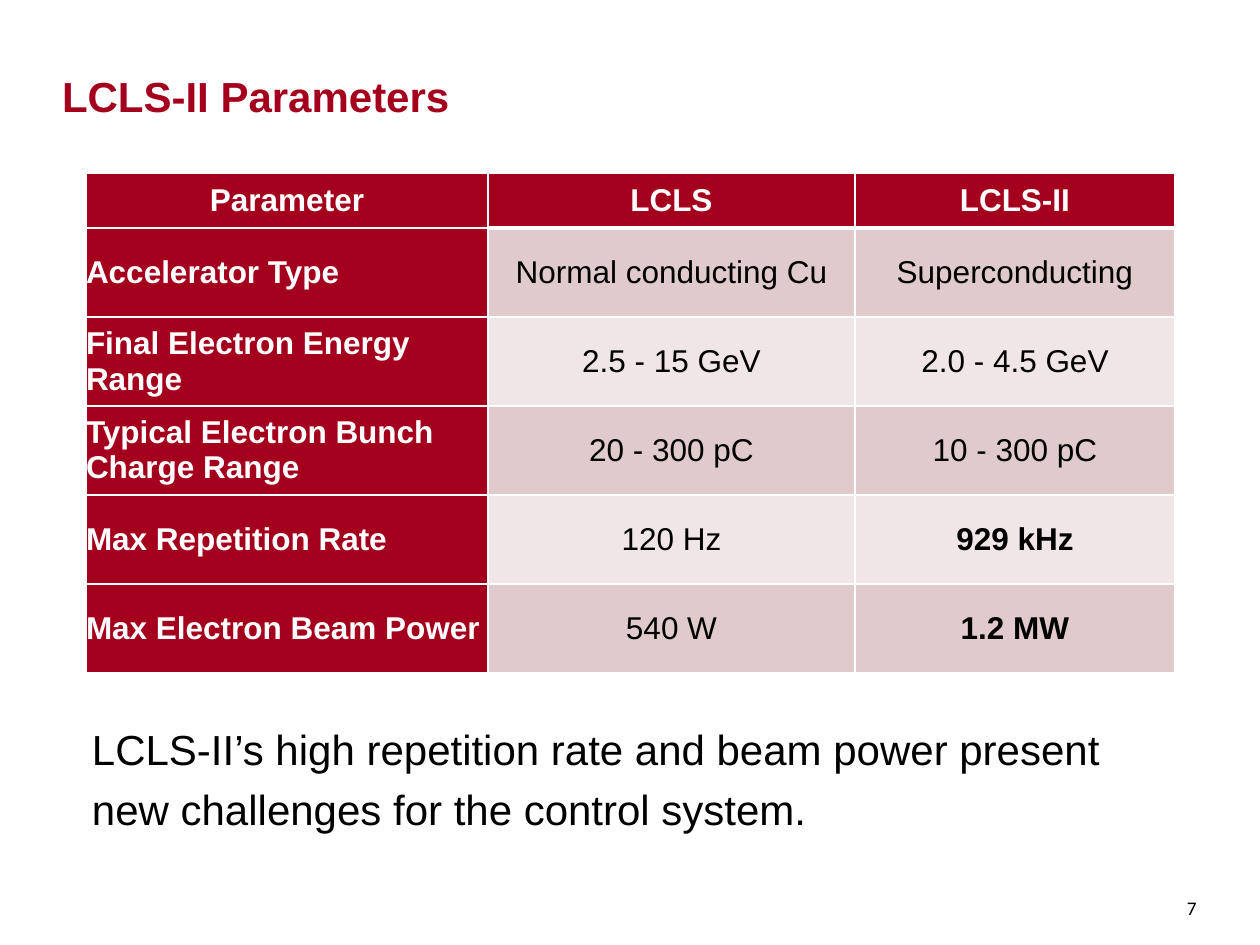
from lxml.etree import SubElement
from pptx import Presentation
from pptx.dml.color import RGBColor
from pptx.enum.text import MSO_ANCHOR, PP_ALIGN
from pptx.oxml.ns import qn
from pptx.util import Emu, Pt

PX = 914400 // 126
CRIMSON, WHITE, BLACK = "A4001D", "FFFFFF", "000000"
BANDS = ["E0CACB", "F0E6E7"]
COLUMN_WIDTHS = [402, 367, 320]
HEADER_HEIGHT, ROW_HEIGHT = 55, 89
PARAMETERS = [
    ["Parameter", "LCLS", "LCLS-II"],
    ["Accelerator Type", "Normal conducting Cu", "Superconducting"],
    ["Final Electron Energy Range", "2.5 - 15 GeV", "2.0 - 4.5 GeV"],
    ["Typical Electron Bunch Charge Range", "20 - 300 pC", "10 - 300 pC"],
    ["Max Repetition Rate", "120 Hz", "929 kHz"],
    ["Max Electron Beam Power", "540 W", "1.2 MW"],
]
HIGHLIGHTS = {"929 kHz", "1.2 MW"}


def px(length):
    return Emu(length * PX)


def color(hex_code):
    return RGBColor.from_string(hex_code)


def style(paragraph, size, hex_code, bold=False, font_name="Arial"):
    for run in paragraph.runs:
        run.font.name = font_name
        run.font.size = Pt(size)
        run.font.bold = bold
        run.font.color.rgb = color(hex_code)


def set_margins(holder, margin):
    holder.margin_left = holder.margin_right = px(margin)
    holder.margin_top = holder.margin_bottom = px(margin)


def add_text(slide, box, text, margin, anchor, wrap=True):
    """Place a text box and return its only paragraph."""
    frame = slide.shapes.add_textbox(*map(px, box)).text_frame
    frame.word_wrap = wrap
    frame.vertical_anchor = anchor
    set_margins(frame, margin)
    frame.text = text
    return frame.paragraphs[0]


def add_title(slide, box):
    title = add_text(slide, box, "LCLS-II Parameters", 0, MSO_ANCHOR.BOTTOM)
    style(title, 24, CRIMSON, bold=True)


def set_borders(cell, top, bottom):
    """Draw white cell borders; top and bottom are widths in points."""
    properties = cell._tc.get_or_add_tcPr()
    for side, width in (("L", 1), ("R", 1), ("T", top), ("B", bottom)):
        line = SubElement(properties, qn(f"a:ln{side}"), w=str(Pt(width)))
        fill = SubElement(line, qn("a:solidFill"))
        SubElement(fill, qn("a:srgbClr"), val=WHITE)


def fill_cell(cell, text, row, column):
    is_heading = row == 0 or column == 0
    rule = 3 if column else 1
    set_borders(cell, top=rule if row == 1 else 1, bottom=rule if row == 0 else 1)
    cell.fill.solid()
    cell.fill.fore_color.rgb = color(CRIMSON if is_heading else BANDS[(row - 1) % 2])
    set_margins(cell, 0)
    cell.vertical_anchor = MSO_ANCHOR.MIDDLE
    cell.text = text
    label = cell.text_frame.paragraphs[0]
    label.alignment = PP_ALIGN.CENTER if row == 0 or column else PP_ALIGN.LEFT
    style(label, 18, WHITE if is_heading else BLACK, is_heading or text in HIGHLIGHTS)


def add_parameter_table(slide, left, top):
    heights = [HEADER_HEIGHT] + [ROW_HEIGHT] * (len(PARAMETERS) - 1)
    box = (left, top, sum(COLUMN_WIDTHS), sum(heights))
    table = slide.shapes.add_table(
        len(heights), len(COLUMN_WIDTHS), *map(px, box)).table
    for column, width in zip(table.columns, COLUMN_WIDTHS):
        column.width = px(width)
    for row, height in zip(table.rows, heights):
        row.height = px(height)
    for row, values in enumerate(PARAMETERS):
        for column, text in enumerate(values):
            fill_cell(table.cell(row, column), text, row, column)


def add_conclusion(slide, box):
    conclusion = add_text(
        slide, box,
        "LCLS-II’s high repetition rate and beam power present "
        "new challenges for the control system.", 6, MSO_ANCHOR.TOP)
    conclusion.line_spacing = 1.2
    style(conclusion, 24, BLACK)


def add_page_number(slide, box):
    number = add_text(slide, box, "7", 6, MSO_ANCHOR.MIDDLE, wrap=False)
    style(number, 11, BLACK, font_name="Calibri")


def main():
    presentation = Presentation()
    presentation.slide_width, presentation.slide_height = px(1260), px(945)
    slide = presentation.slides.add_slide(presentation.slide_layouts[6])
    add_page_number(slide, (1181, 891, 25, 33))
    add_title(slide, (62, 18, 1116, 103))
    add_parameter_table(slide, 86, 173)
    add_conclusion(slide, (86, 707, 1089, 118))
    presentation.save("out.pptx")


if __name__ == "__main__":
    main()
